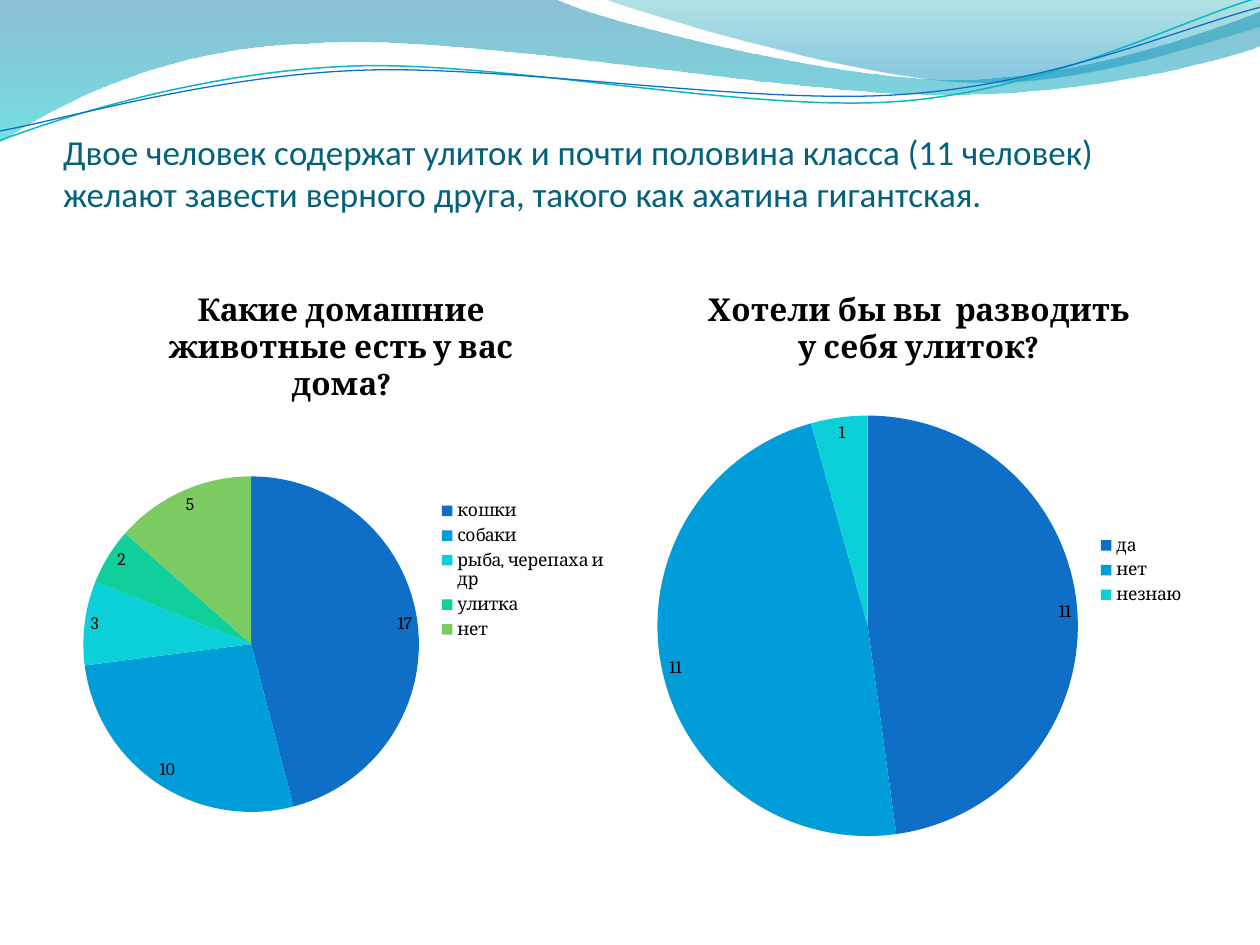
from math import cos, radians, sin

from lxml import etree
from pptx import Presentation
from pptx.chart.data import CategoryChartData
from pptx.dml.color import RGBColor
from pptx.enum.chart import XL_CHART_TYPE, XL_LABEL_POSITION, XL_LEGEND_POSITION
from pptx.enum.text import MSO_ANCHOR, MSO_AUTO_SIZE, PP_ALIGN
from pptx.oxml.ns import qn
from pptx.util import Inches, Pt

PIE = XL_CHART_TYPE.PIE
BEST_FIT = XL_LABEL_POSITION.BEST_FIT
RIGHT = XL_LEGEND_POSITION.RIGHT
BOTTOM, LEFT = MSO_ANCHOR.BOTTOM, PP_ALIGN.LEFT

WIDTH, HEIGHT = 10, 7.5
MARGIN, GAP = 0.5, 0.16
COLUMN = (WIDTH - 2 * MARGIN - GAP) / 2
CHART_TOP, CHART_HEIGHT = 0.28 * HEIGHT, 4.85
TILT = -2.7

COLORS = {
    "title": "04617B", "text": "000000",
    "deep": "0074A1", "aqua": "00C6CF", "teal": "00A1A9", "sky": "008BBF",
    "teal_line": "0AB8BF", "blue_line": "0F6FC6",
}
SLICES = ["0F6FC6", "009DD9", "0BD0D9", "10CF9B", "7CCA62"]

WAVES = [
    ((0, 0),
     [(4.4, -0.01), (4.76, 0.17, 6.64, 0.63, 7.58, 0.63),
      (8.53, 0.63, 9.58, 0.26, 10, 0.09), (10.01, 0.36),
      (9.83, 0.44, 8.7, 0.76, 7.46, 0.75), (6.22, 0.75, 3.82, 0.28, 2.57, 0.34),
      (1.29, 0.36, 0.46, 0.83, -0.01, 1.13), (0, 0)],
     [(0, "deep", 45), (1, "aqua", 55)]),
    ((4.79, -0.01),
     [(5.09, 0.11, 6.82, 0.62, 7.69, 0.65), (8.56, 0.69, 9.61, 0.32, 10, 0.21),
      (10, 0), (4.79, -0.01)],
     [(0, "teal", 30), (0.8, "sky", 45)]),
]
STRANDS = [
    ((0, 1.11),
     [(0.48, 0.93, 1.58, 0.57, 2.77, 0.52), (3.95, 0.47, 5.93, 0.89, 7.13, 0.8),
      (8.33, 0.71, 9.38, 0.15, 9.98, -0.02)],
     (4.99, 0.58), "teal_line", 0.85),
    ((0, 1.04),
     [(0.47, 0.96, 1.64, 0.61, 2.83, 0.56), (4.03, 0.51, 5.97, 0.84, 7.17, 0.75),
      (8.36, 0.67, 9.41, 0.21, 10, 0.06)],
     (5, 0.59), "blue_line", 0.75),
]
TITLE = ("Двое человек содержат улиток и почти половина класса (11 человек) "
         "желают завести верного друга, такого как ахатина гигантская.")
CHARTS = [
    ("Какие домашние животные есть у вас дома?",
     {"кошки": 17, "собаки": 10, "рыба, черепаха и др": 3, "улитка": 2, "нет": 5}),
    ("Хотели бы вы  разводить у себя улиток?",
     {"да": 11, "нет": 11, "незнаю": 1}),
]


def rgb(name):
    """Return the colour stored under a name."""
    return RGBColor.from_string(COLORS[name])


def style_font(font, color="text", **values):
    """Set the colour and the given attributes of a font."""
    for key, value in values.items():
        setattr(font, key, value)
    font.color.rgb = rgb(color)


def turn(point, center, degrees):
    """Turn a point clockwise about a center."""
    a = radians(degrees)
    dx, dy = point[0] - center[0], point[1] - center[1]
    return center[0] + dx * cos(a) - dy * sin(a), center[1] + dx * sin(a) + dy * cos(a)


def add_outline(s, start, segments, close, center=(0, 0), tilt=0):
    """Draw a freeform of lines and cubic curves, tilted about a center."""
    points = [start] + [pair for seg in segments for pair in zip(seg[::2], seg[1::2])]
    points = [turn(point, center, -tilt) for point in points]
    points = [(Inches(x), Inches(y)) for x, y in points]
    builder = s.shapes.build_freeform(*points[0], scale=1.0)
    builder.add_line_segments(points[1:], close=close)
    sp = builder.convert_to_shape()
    steps = iter(list(sp._element.spPr.iter(qn("a:lnTo"))))
    for segment in segments:
        first = next(steps)
        if len(segment) == 6:
            curve = etree.Element(qn("a:cubicBezTo"))
            first.addprevious(curve)
            for step in (first, next(steps), next(steps)):
                curve.append(step[0])
                step.getparent().remove(step)
    sp.rotation = tilt
    sp.shadow.inherit = False
    return sp


def add_wave(s, start, segments, stops):
    """Draw a band with a translucent gradient from top to bottom."""
    sp = add_outline(s, start, segments, True)
    sp.line.fill.background()
    sp.fill.gradient()
    sp.fill.gradient_angle = 270
    for stop, (position, color, _) in zip(sp.fill.gradient_stops, stops):
        stop.position = position
        stop.color.rgb = rgb(color)
    colors = sp._element.spPr.iter(qn("a:srgbClr"))
    for element, (_, _, opacity) in zip(list(colors), stops):
        etree.SubElement(element, qn("a:alpha"), val=str(opacity * 1000))


def add_strand(s, start, segments, center, color, width):
    """Draw a thin tilted curve."""
    sp = add_outline(s, start, segments, False, center, TILT)
    sp.left = Inches(center[0]) - sp.width // 2
    sp.top = Inches(center[1]) - sp.height // 2
    sp.fill.background()
    sp.line.color.rgb = rgb(color)
    sp.line.width = Pt(width)


def set_title(s, text):
    """Place the title in front of the waves and format it."""
    sp = s.shapes.title
    s.shapes._spTree.append(sp._element)
    sp.left, sp.top = Inches(MARGIN), Inches(0.77)
    sp.width, sp.height = Inches(WIDTH - 2 * MARGIN), Inches(0.93)
    tf = sp.text_frame
    tf.text = text
    frame = {"margin_left": 0, "margin_right": 0, "margin_top": Inches(0.05),
             "margin_bottom": 0, "vertical_anchor": BOTTOM, "word_wrap": True,
             "auto_size": MSO_AUTO_SIZE.NONE}
    for key, value in frame.items():
        setattr(tf, key, value)
    p = tf.paragraphs[0]
    p.alignment = LEFT
    style_font(p.runs[0].font, "title", name="Calibri", size=Pt(20))


def add_pie(s, column, title, answers):
    """Add a pie chart of survey answers in a column."""
    data = CategoryChartData()
    data.categories = list(answers)
    data.add_series("Series 1", list(answers.values()))
    left = MARGIN + column * (COLUMN + GAP)
    chart = s.shapes.add_chart(PIE, Inches(left), Inches(CHART_TOP), Inches(COLUMN),
                               Inches(CHART_HEIGHT), data).chart
    style_font(chart.font, name="Cambria", size=Pt(10))
    chart.has_title = True
    tf = chart.chart_title.text_frame
    tf.text = title
    style_font(tf.paragraphs[0].runs[0].font, name="Cambria", size=Pt(18), bold=True)
    chart.has_legend = True
    chart.legend.position = RIGHT
    chart.legend.include_in_layout = False
    plot = chart.plots[0]
    plot.vary_by_categories = True
    plot.has_data_labels = True
    plot.data_labels.show_value = True
    plot.data_labels.show_percentage = False
    plot.data_labels.position = BEST_FIT
    for i, color in enumerate(SLICES[:len(answers)]):
        fill = plot.series[0].points[i].format.fill
        fill.solid()
        fill.fore_color.rgb = RGBColor.from_string(color)


def main():
    """Build the slide and save it."""
    prs = Presentation()
    prs.slide_width, prs.slide_height = Inches(WIDTH), Inches(HEIGHT)
    s = prs.slides.add_slide(prs.slide_layouts[5])
    for wave in WAVES:
        add_wave(s, *wave)
    for strand in STRANDS:
        add_strand(s, *strand)
    set_title(s, TITLE)
    for column, (title, answers) in enumerate(CHARTS):
        add_pie(s, column, title, answers)
    prs.save("out.pptx")


if __name__ == "__main__":
    main()
